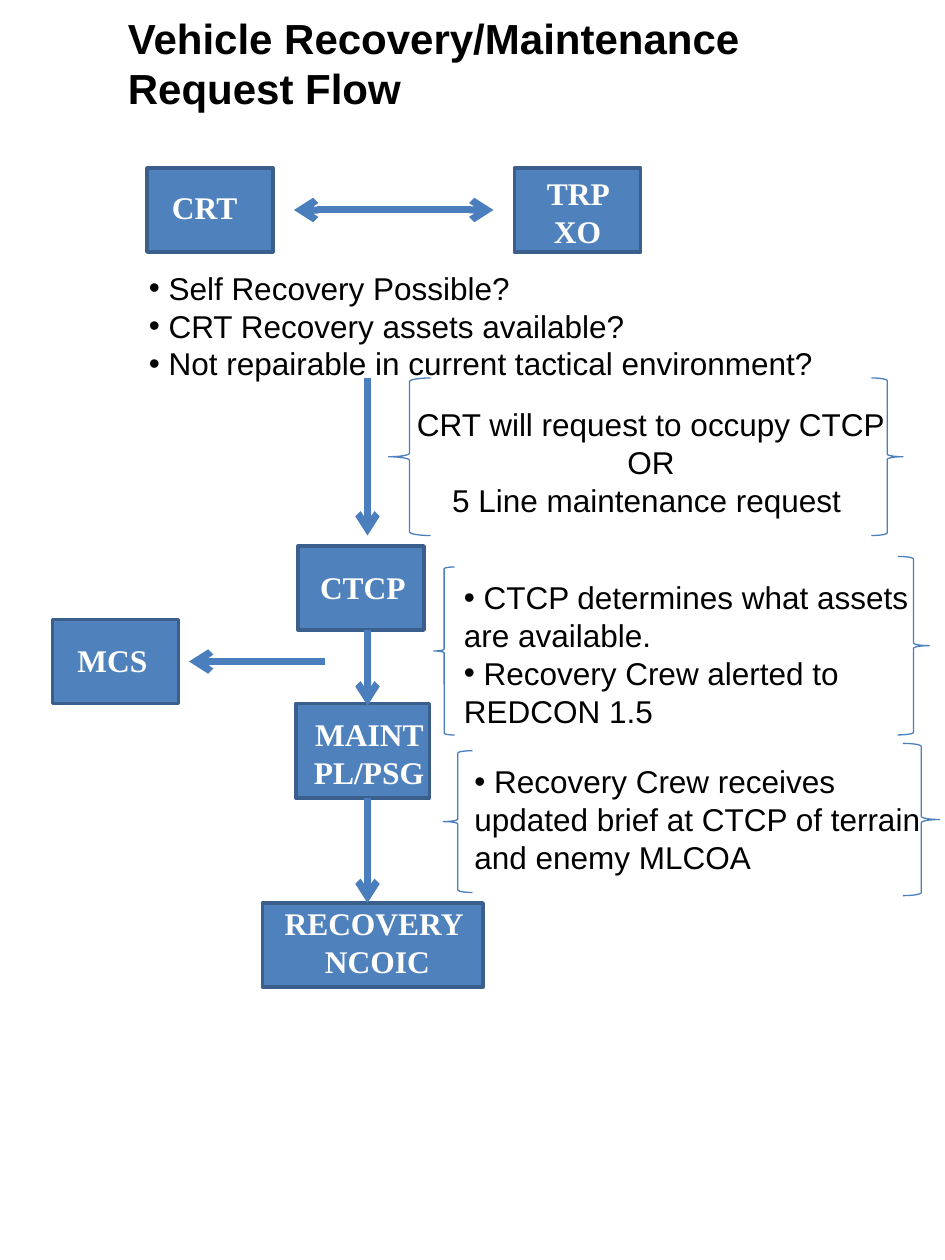
from lxml.etree import SubElement
from pptx import Presentation
from pptx.dml.color import RGBColor
from pptx.enum.shapes import MSO_CONNECTOR as Connector, MSO_SHAPE as Shape
from pptx.enum.text import MSO_ANCHOR as Anchor, PP_ALIGN as Align
from pptx.oxml.ns import qn
from pptx.util import Inches, Pt


def color(value):
    return RGBColor.from_string(value)


deck = Presentation()
deck.slide_width, deck.slide_height = Inches(7.5), Inches(10)
page = deck.slides.add_slide(deck.slide_layouts[6])
COLUMN = deck.slide_width / 90
ROW = deck.slide_height / 120

TITLE = {"size": Pt(24), "name": "Arial", "bold": True}
BODY = {"size": Pt(18), "name": "Arial", "bold": False}
LABEL = {"size": Pt(18), "name": "Times New Roman", "bold": True}


def add_text(left, top, width, height, lines, style, ink, align=Align.LEFT, bullets=False):
    box = page.shapes.add_textbox(
        int(left * COLUMN), int(top * ROW), int(width * COLUMN), int(height * ROW))
    frame = box.text_frame
    frame.word_wrap = True
    for index, line in enumerate(lines):
        para = frame.paragraphs[0] if index == 0 else frame.add_paragraph()
        para.alignment = align
        if bullets:
            SubElement(para._p.get_or_add_pPr(), qn("a:buFont"), typeface="Arial")
            SubElement(para._p.get_or_add_pPr(), qn("a:buChar"), char="•")
        span = para.add_run()
        span.text = line
        for name, value in style.items():
            setattr(span.font, name, value)
        span.font.color.rgb = color(ink)
    return box


title = add_text(11, 3, 72, 6, ["Vehicle Recovery/Maintenance Request Flow"], TITLE, "000000")
title.text_frame.vertical_anchor = Anchor.MIDDLE

stations = [
    (14, 16, 12, 8), (49, 16, 12, 8), (28.4, 52, 12, 8),
    (28.2, 67, 12.7, 9), (25, 86, 21, 8), (5, 59, 12, 8),
]
for left, top, width, height in stations:
    station = page.shapes.add_shape(
        Shape.RECTANGLE, int(left * COLUMN), int(top * ROW), int(width * COLUMN), int(height * ROW))
    station.shadow.inherit = False
    station.fill.solid()
    station.fill.fore_color.rgb = color("4F81BD")
    station.line.color.rgb = color("3A5F8C")
    station.line.width = Pt(2)

arrows = [
    (35, 36, 35, 51, ["tailEnd"]),
    (28, 20, 47, 20, ["headEnd", "tailEnd"]),
    (35, 60, 35, 67.2, ["tailEnd"]),
    (35, 76, 35, 86, ["tailEnd"]),
    (31, 63, 18, 63, ["tailEnd"]),
]
for start_x, start_y, end_x, end_y, ends in arrows:
    arrow = page.shapes.add_connector(
        Connector.STRAIGHT, int(start_x * COLUMN), int(start_y * ROW),
        int(end_x * COLUMN), int(end_y * ROW))
    arrow.line.color.rgb = color("4B7EBC")
    arrow.line.width = Pt(4)
    for end in ends:
        SubElement(arrow.line._get_or_add_ln(), qn(f"a:{end}"), type="arrow")
    SubElement(arrow._element.spPr, qn("a:effectLst"))

braces = [
    (37, 36, 4, 15, False), (83, 36, 3, 15, True),
    (41.3, 54, 2, 16, False), (85.5, 53, 3, 17, True),
    (42.2, 71.5, 2.8, 13.5, False), (86, 70.8, 3.5, 14.5, True),
]
for left, top, width, height, mirrored in braces:
    brace = page.shapes.add_shape(
        Shape.LEFT_BRACE, int(left * COLUMN), int(top * ROW), int(width * COLUMN), int(height * ROW))
    brace.shadow.inherit = False
    brace.fill.background()
    brace.line.color.rgb = color("4B7EBC")
    brace.line.width = Pt(0.75)
    if mirrored:
        brace._element.spPr.xfrm.set("flipH", "1")

labels = [
    (15.2, 17.3, 10, 4.8, ["CRT"], Align.LEFT),
    (50, 16, 10, 8.5, ["TRP XO"], Align.CENTER),
    (29.3, 53.5, 11.8, 4.8, ["CTCP"], Align.LEFT),
    (28, 67.5, 14.3, 8.5, ["MAINT PL/PSG"], Align.CENTER),
    (25.8, 85.5, 20.3, 8.5, ["RECOVERY ", "NCOIC"], Align.CENTER),
    (6.2, 60.5, 9.2, 4.8, ["MCS"], Align.LEFT),
]
for left, top, width, height, lines, align in labels:
    add_text(left, top, width, height, lines, LABEL, "FFFFFF", align)

add_text(38, 38, 48, 12.1, [
    "CRT will request to occupy CTCP", "OR", "5 Line maintenance request ",
], BODY, "000000", Align.CENTER)

notes = [
    (13, 25, 66, 12.1, [
        " Self Recovery Possible?",
        " CRT Recovery assets available?",
        " Not repairable in current tactical environment?"]),
    (43, 54.5, 46, 15.7, [
        " CTCP determines what assets are available.",
        " Recovery Crew alerted to REDCON 1.5"]),
    (44, 72, 46, 12.1, [
        " Recovery Crew receives updated brief at CTCP of terrain and enemy MLCOA"]),
]
for left, top, width, height, lines in notes:
    add_text(left, top, width, height, lines, BODY, "000000", bullets=True)

deck.save("out.pptx")
